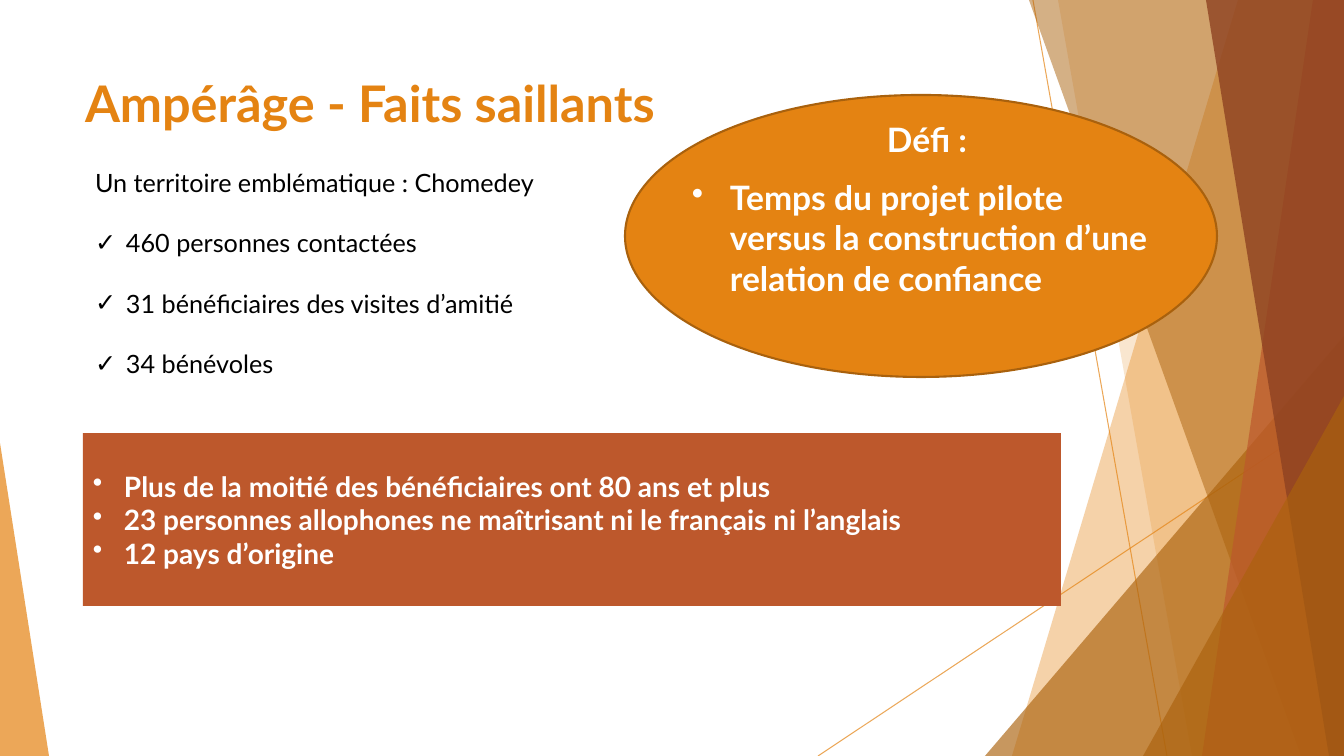
from lxml.etree import SubElement
from pptx import Presentation
from pptx.dml.color import RGBColor
from pptx.enum.shapes import MSO_CONNECTOR as Connector, MSO_SHAPE as Preset
from pptx.enum.text import MSO_ANCHOR as Anchor, MSO_AUTO_SIZE as AutoSize, PP_ALIGN as Align
from pptx.oxml.ns import qn
from pptx.util import Emu, Pt

WIDTH, HEIGHT = 1344, 756
FONT = "Lato"
ORANGE = RGBColor(0xE4, 0x83, 0x12)
BROWN = RGBColor(0xAB, 0x62, 0x0D)
OUTLINE = RGBColor(0xA9, 0x61, 0x0D)
RUST = RGBColor(0xBD, 0x58, 0x2C)
DARK_RUST = RGBColor(0x8E, 0x42, 0x21)
WHITE = RGBColor(0xFF, 0xFF, 0xFF)
BLACK = RGBColor(0, 0, 0)


def px(length):
    return Emu(round(length * 914400 / 100.8))


def set_opacity(shape, percent):
    for color in shape._element.spPr.iter(qn("a:srgbClr")):
        SubElement(color, qn("a:alpha"), val=str(percent * 1000))


def paint(shape, color, opacity=100, outline=None):
    shape.shadow.inherit = False
    shape.fill.solid()
    shape.fill.fore_color.rgb = color
    if outline is None:
        shape.line.fill.background()
    else:
        shape.line.color.rgb = outline
        shape.line.width = Pt(1.5)
    if opacity < 100:
        set_opacity(shape, opacity)


def add_preset(page, preset, box, color, opacity=100, outline=None):
    shape = page.shapes.add_shape(preset, *map(px, box))
    paint(shape, color, opacity, outline)
    return shape


def place(shape, box):
    shape.left, shape.top, shape.width, shape.height = map(px, box)


def prepare_frame(shape, top=5):
    frame = shape.text_frame
    frame.word_wrap = True
    frame.auto_size = AutoSize.NONE
    frame.vertical_anchor = Anchor.TOP
    frame.margin_left = frame.margin_right = px(10)
    frame.margin_top, frame.margin_bottom = px(top), px(5)
    return frame


def write(frame, text, size, color, bold=False, align=Align.LEFT,
          bullet=None, indent=0, before=0):
    para = frame.paragraphs[0]
    if para.runs:
        para = frame.add_paragraph()
    para.alignment = align
    para.line_spacing = 1.0
    para.space_before = Pt(before)
    para.space_after = Pt(0)
    properties = para._p.get_or_add_pPr()
    properties.set("marL", str(px(indent)))
    properties.set("indent", str(-px(indent)))
    if bullet:
        SubElement(properties, qn("a:buChar"), char=bullet)
    else:
        SubElement(properties, qn("a:buNone"))
    span = para.add_run()
    span.text = text
    span.font.name = FONT
    span.font.size = Pt(size)
    span.font.bold = bold
    span.font.color.rgb = color


def draw_ray(page, start, end):
    ray = page.shapes.add_connector(Connector.STRAIGHT, *map(px, start + end))
    ray.line.color.rgb = ORANGE
    ray.line.width = Pt(0.75)
    set_opacity(ray, 70)
    SubElement(ray._element.spPr, qn("a:effectLst"))


def draw_band(page, top, bottom, color, opacity):
    builder = page.shapes.build_freeform(px(top), 0)
    corners = [(WIDTH, 0), (WIDTH, HEIGHT), (bottom, HEIGHT)]
    builder.add_line_segments([(px(x), px(y)) for x, y in corners], close=True)
    paint(builder.convert_to_shape(), color, opacity)


def draw_corner(page, left, top, width, apex, color, opacity):
    box = (left, top, width, HEIGHT - top)
    corner = add_preset(page, Preset.ISOSCELES_TRIANGLE, box, color, opacity)
    corner.adjustments[0] = apex


def draw_facets(page):
    draw_ray(page, (1033, 0), (1167, HEIGHT))
    draw_ray(page, (WIDTH, 406), (818, HEIGHT))
    draw_band(page, 1238, 1012, ORANGE, 36)
    draw_band(page, 1058, 1192, ORANGE, 20)
    draw_corner(page, 985, 336, 359, 1, BROWN, 66)
    draw_band(page, 1029, 1301, BROWN, 50)
    draw_band(page, 1313, 1202, RUST, 70)
    draw_band(page, 1206, 1329, DARK_RUST, 80)
    draw_corner(page, 1143, 396, 201, 1, BROWN, 66)
    draw_corner(page, 0, 443, 49, 0, ORANGE, 70)


def fill_title(page, box):
    title = page.shapes.title
    place(title, box)
    page.shapes._spTree.append(title._element)
    write(prepare_frame(title), "Ampérâge - Faits saillants", 36, ORANGE, bold=True)


def fill_territory(page, box):
    body = page.placeholders[1]
    place(body, box)
    page.shapes._spTree.append(body._element)
    frame = prepare_frame(body)
    write(frame, "Un territoire emblématique : Chomedey", 18, BLACK)
    for fact in ("460 personnes contactées",
                 "31 bénéficiaires des visites d’amitié",
                 "34 bénévoles"):
        write(frame, fact, 18, BLACK, bullet="✓", indent=31, before=21.6)


def draw_profile(page, box):
    panel = add_preset(page, Preset.RECTANGLE, box, RUST)
    frame = prepare_frame(panel, top=36)
    for fact in ("Plus de la moitié des bénéficiaires ont 80 ans et plus",
                 "23 personnes allophones ne maîtrisant ni le français ni l’anglais",
                 "12 pays d’origine"):
        write(frame, fact, 20, WHITE, bold=True, bullet="•", indent=31)


def draw_challenge(page, box):
    left, top, width, height = box
    add_preset(page, Preset.OVAL, box, ORANGE, outline=OUTLINE)
    label = page.shapes.add_textbox(*map(px, (left + 57, top + 19, width - 102, height - 30)))
    frame = prepare_frame(label)
    write(frame, "Défi :", 24, WHITE, bold=True, align=Align.CENTER)
    write(frame, "Temps du projet pilote versus la construction d’une relation de confiance",
          24, WHITE, bold=True, bullet="•", indent=38, before=12.6)


def main():
    deck = Presentation()
    deck.slide_width, deck.slide_height = px(WIDTH), px(HEIGHT)
    page = deck.slides.add_slide(deck.slide_layouts[1])
    draw_facets(page)
    fill_title(page, (75, 67, 947, 145))
    fill_territory(page, (85, 162, 500, 254))
    draw_profile(page, (83, 433, 978, 173))
    draw_challenge(page, (625, 95, 592, 282))
    deck.save("out.pptx")


if __name__ == "__main__":
    main()
